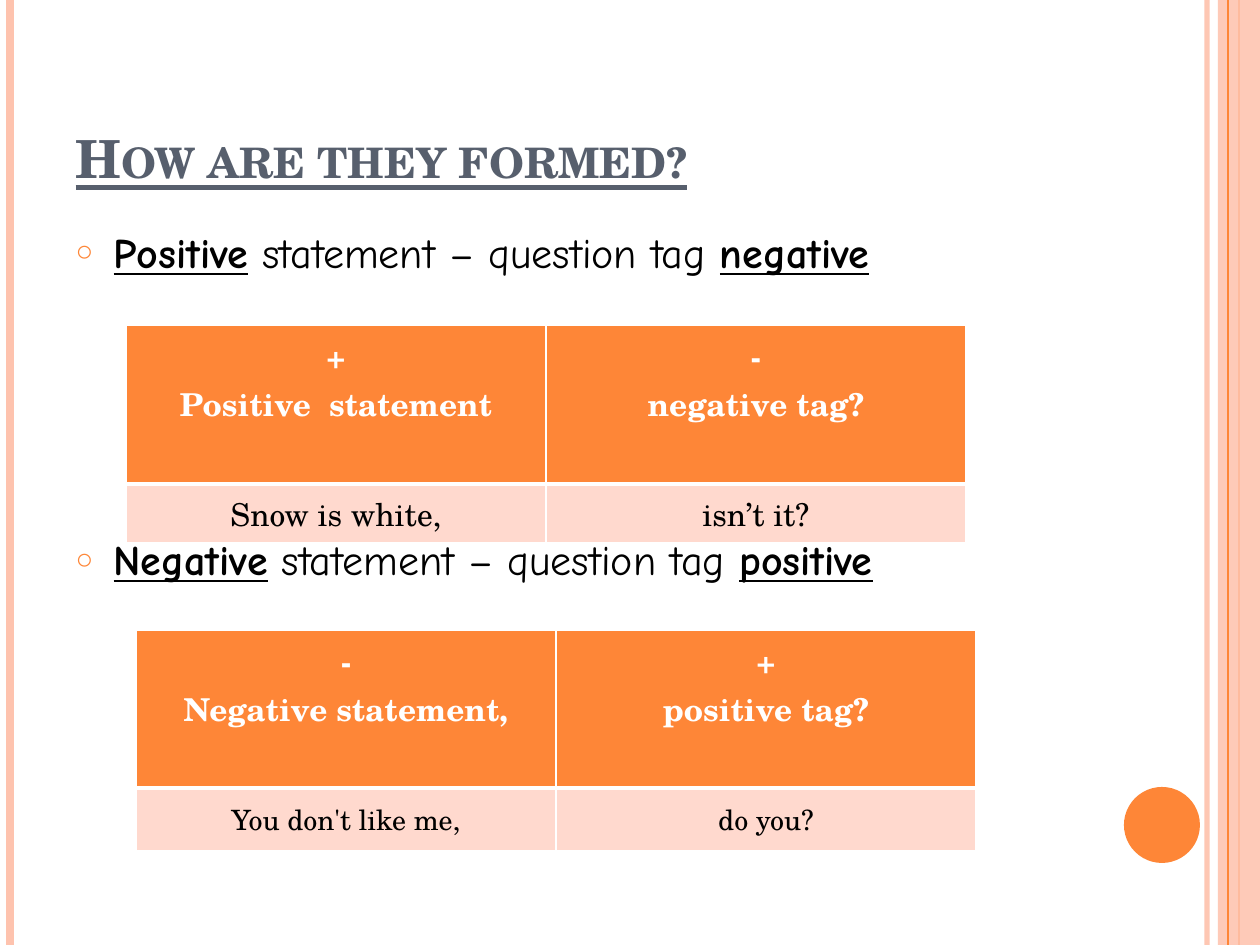
"""Build the slide on how question tags are formed."""
from lxml import etree
from pptx import Presentation
from pptx.dml.color import RGBColor
from pptx.enum import shapes, text
from pptx.oxml.ns import qn
from pptx.util import Pt

EMU_PER_PX = 914400 / 126
WIDTH, HEIGHT = 1260, 945
ORANGE = RGBColor(0xFE, 0x86, 0x37)
PEACH = RGBColor(0xFE, 0xC3, 0xAE)
PALE = RGBColor(0xFF, 0xD9, 0xCE)
SLATE = RGBColor(0x57, 0x5F, 0x6D)
BLACK = RGBColor(0, 0, 0)
WHITE = RGBColor(0xFF, 0xFF, 0xFF)
SERIF, HAND = "TeX Gyre Schola", "Comic Neue"


def px(n):
    return round(n * EMU_PER_PX)


def add(parent, tag, **attrs):
    return etree.SubElement(parent, qn(tag), {k: str(v) for k, v in attrs.items()})


def set_alpha(element, percent):
    for color in element.iter(qn("a:srgbClr")):
        add(color, "a:alpha", val=percent * 1000)


class Deck:
    def __init__(self):
        self.prs = Presentation()
        self.prs.slide_width, self.prs.slide_height = px(WIDTH), px(HEIGHT)
        self.s = self.prs.slides.add_slide(self.prs.slide_layouts[1])

    def font(self, p, name, size, color, bold=None):
        f = p.font
        f.name, f.size, f.bold = name, Pt(size), bold
        f.color.rgb = color

    def place(self, sp, x, y, w, h, anchor):
        sp.left, sp.top, sp.width, sp.height = map(px, (x, y, w, h))
        tf = sp.text_frame
        tf.word_wrap, tf.auto_size = True, text.MSO_AUTO_SIZE.NONE
        tf.vertical_anchor = anchor
        return tf

    def rail(self, x, color, width, alpha=100):
        line = self.s.shapes.add_connector(
            shapes.MSO_CONNECTOR.STRAIGHT, px(x), 0, px(x), px(HEIGHT))
        line.line.color.rgb, line.line.width = color, Pt(width)
        spPr = line._element.spPr
        if alpha < 100:
            set_alpha(spPr, alpha)
        add(spPr, "a:effectLst")

    def shape(self, kind, x, y, w, h, color, alpha=100):
        sp = self.s.shapes.add_shape(kind, *map(px, (x, y, w, h)))
        sp.shadow.inherit = False
        sp.fill.solid()
        sp.fill.fore_color.rgb = color
        sp.line.fill.background()
        if alpha < 100:
            set_alpha(sp._element.spPr, alpha)

    def title(self, words, *box):
        tf = self.place(self.s.shapes.title, *box, text.MSO_ANCHOR.BOTTOM)
        p = tf.paragraphs[0]
        p.text, p.alignment = words, text.PP_ALIGN.LEFT
        self.font(p, SERIF, 30, SLATE, True)
        p.font.underline = True
        p._p.pPr.find(qn("a:defRPr")).set("cap", "small")

    def bullets(self, items, *box):
        tf = self.place(self.s.placeholders[1], *box, text.MSO_ANCHOR.TOP)
        for i, (space, runs) in enumerate(items):
            p = tf.add_paragraph() if i else tf.paragraphs[0]
            p.space_before = Pt(space)
            pPr = p._p.get_or_add_pPr()
            pPr.set("marL", str(px(38)))
            pPr.set("indent", str(-px(38)))
            add(add(pPr, "a:buClr"), "a:srgbClr", val=ORANGE)
            add(pPr, "a:buSzPct", val=70000)
            add(pPr, "a:buChar", char="○")
            self.font(p, HAND, 24, BLACK)
            for words, strong in runs:
                r = p.add_run()
                r.text = words
                r.font.bold = r.font.underline = strong

    def borders(self, cell, **widths):
        tcPr = cell._tc.get_or_add_tcPr()
        for side in "LRTB":
            ln = add(tcPr, f"a:ln{side}", w=Pt(widths.get(side, 1)))
            add(add(ln, "a:solidFill"), "a:srgbClr", val=WHITE)

    def table(self, x, y, col_width, heights, rows, body_size):
        frame = self.s.shapes.add_table(
            len(rows), 2, px(x), px(y), px(2 * col_width), px(sum(heights)))
        tbl = frame.table
        for col in tbl.columns:
            col.width = px(col_width)
        for i, (height, row) in enumerate(zip(heights, rows)):
            head = i == 0
            tbl.rows[i].height = px(height)
            for j, words in enumerate(row):
                cell = tbl.cell(i, j)
                self.borders(cell, **{"B" if head else "T": 3})
                cell.fill.solid()
                cell.fill.fore_color.rgb = ORANGE if head else PALE
                cell.vertical_anchor = (
                    text.MSO_ANCHOR.TOP if head else text.MSO_ANCHOR.MIDDLE)
                p = cell.text_frame.paragraphs[0]
                p.text, p.alignment = words, text.PP_ALIGN.CENTER
                self.font(p, SERIF, 18 if head else body_size,
                          WHITE if head else BLACK, head)


def main():
    deck = Deck()
    deck.rail(1207, PEACH, 3, 93)
    deck.rail(10, PEACH, 4.5)
    deck.rail(1239, ORANGE, 1.5)
    deck.shape(shapes.MSO_SHAPE.RECTANGLE, 1218, 0, 42, HEIGHT, PEACH, 87)
    deck.rail(1228, ORANGE, 0.75)
    deck.shape(shapes.MSO_SHAPE.OVAL, 1124, 787, 76, 76, ORANGE)
    deck.title("How are they formed?", 63, 38, 1029, 157)
    middle = (" statement – question tag ", False)
    deck.bullets([
        (6, [("Positive", True), middle, ("negative", True)]),
        (147, [("Negative", True), middle, ("positive", True)]),
    ], 63, 220, 1029, 672)
    deck.table(126, 325, 420, (159, 58), [
        ("+\vPositive  statement", "-\vnegative tag?"),
        ("Snow is white,", "isn’t it?"),
    ], 18)
    deck.table(136, 630, 420, (158, 63), [
        ("-\vNegative statement,", "+\vpositive tag?"),
        ("You don't like me,", "do you?"),
    ], 16)
    deck.prs.save("out.pptx")


if __name__ == "__main__":
    main()
